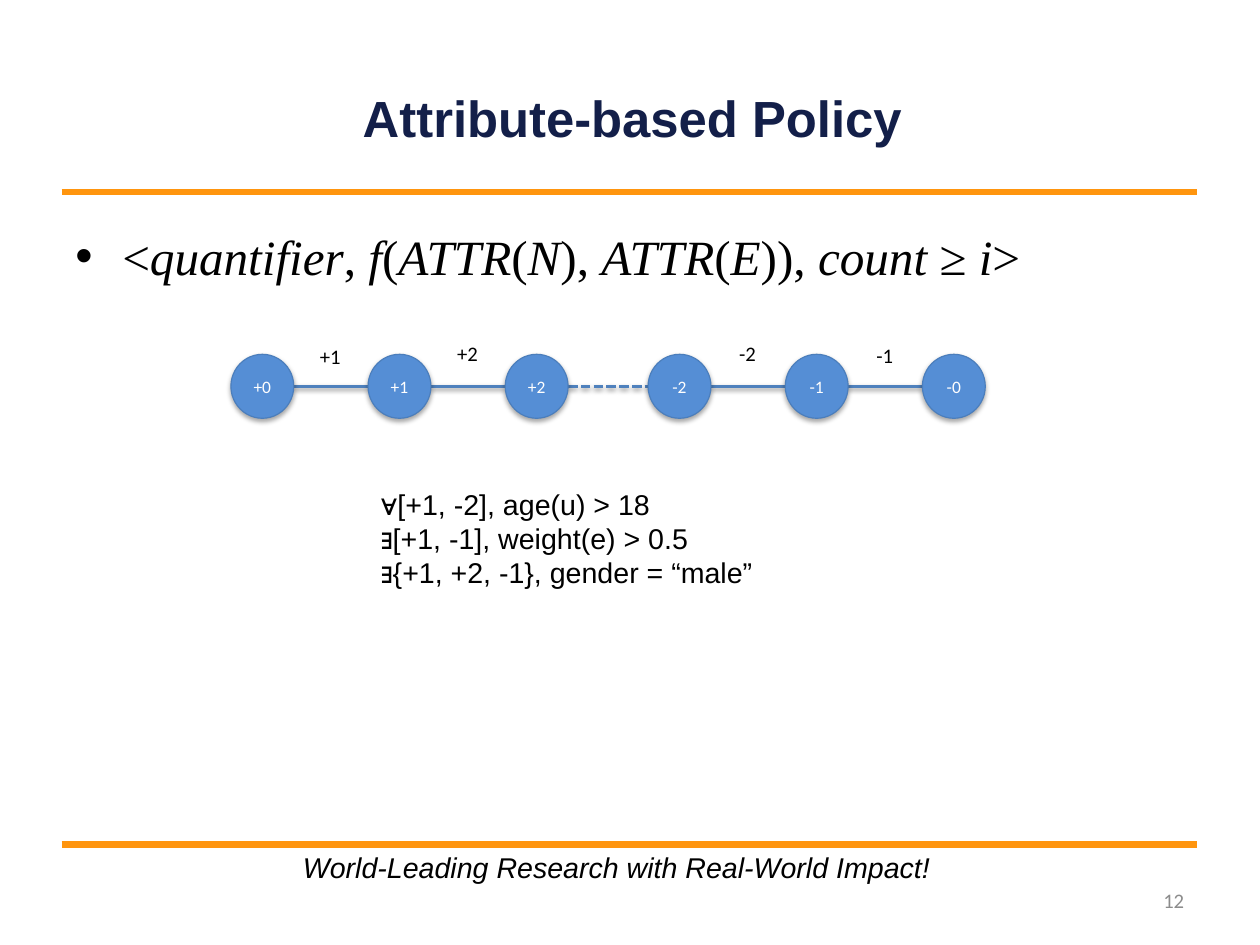
from lxml import etree
from pptx import Presentation, util as u
from pptx.dml.color import RGBColor
from pptx.enum import dml, shapes, text
from pptx.oxml.ns import qn

HUES = {"navy": "131F49", "black": "000000", "white": "FFFFFF", "grey": "8C8C8C",
        "orange": "FF950E", "node": "558ED5", "rim": "4B7EBC", "edge": "4F81BD"}
LEFT, MID = text.PP_ALIGN.LEFT, text.PP_ALIGN.CENTER
TOP, HALF = text.MSO_ANCHOR.TOP, text.MSO_ANCHOR.MIDDLE


class Deck:
    """Holds the slide and draws each kind of element in its style."""

    def __init__(self):
        self.prs = Presentation()
        self.prs.slide_width, self.prs.slide_height = u.Cm(28), u.Cm(21)
        self.slide = self.prs.slides.add_slide(self.prs.slide_layouts[1])

    def hue(self, name):
        return RGBColor.from_string(HUES[name])

    def font(self, para, size, face, hue, bold=None, slant=None):
        font = para.font
        font.size, font.name, font.bold, font.italic = u.Pt(size), face, bold, slant
        font.color.rgb = self.hue(hue)

    def frame(self, shape, anchor=TOP, pad=(0.11, 0.05), wrap=True):
        frame = shape.text_frame
        frame.margin_left = frame.margin_right = u.Inches(pad[0])
        frame.margin_top = frame.margin_bottom = u.Inches(pad[1])
        frame.vertical_anchor, frame.word_wrap = anchor, wrap
        frame.auto_size = text.MSO_AUTO_SIZE.NONE
        return frame

    def place(self, shape, box):
        shape.left, shape.top, shape.width, shape.height = map(u.Inches, box)

    def fill(self, frame, words, align, *style, **more):
        for i, line in enumerate(words.split("\n")):
            para = frame.add_paragraph() if i else frame.paragraphs[0]
            para.text, para.alignment = line, align
            self.font(para, *style, **more)

    def title(self, words, box):
        shape = self.slide.shapes.title
        self.place(shape, box)
        self.fill(self.frame(shape, HALF, (0, 0)), words, MID, 32, "Arial", "navy", bold=True)

    def body(self, parts, box):
        shape = self.slide.placeholders[1]
        self.place(shape, box)
        para = self.frame(shape).paragraphs[0]
        props = para._p.get_or_add_pPr()
        props.set("marL", str(u.Inches(0.41)))
        props.set("indent", str(-u.Inches(0.41)))
        etree.SubElement(props, qn("a:buChar"), char="•")
        para.space_before = u.Pt(0)
        self.font(para, 31, "Times New Roman", "black")
        for i, part in enumerate(parts):
            run = para.add_run()
            run.text, run.font.italic = part, i % 2 == 1

    def label(self, words, box, align, *style, anchor=TOP, wrap=True, **more):
        shape = self.slide.shapes.add_textbox(*map(u.Inches, box))
        self.fill(self.frame(shape, anchor, wrap=wrap), words, align, *style, **more)

    def shade(self, shape, alpha=None, dist=0):
        fx = etree.SubElement(shape._element.spPr, qn("a:effectLst"))
        if alpha:
            glow = etree.SubElement(fx, qn("a:outerShdw"), blurRad=str(u.Pt(3.1)),
                                    dist=str(u.Pt(dist)), dir="5400000", rotWithShape="0")
            tint = etree.SubElement(glow, qn("a:srgbClr"), val=HUES["black"])
            etree.SubElement(tint, qn("a:alpha"), val=str(alpha * 1000))

    def line(self, x, y, end, hue, width, dash=None, **shade):
        line = self.slide.shapes.add_connector(
            shapes.MSO_CONNECTOR.STRAIGHT, *map(u.Inches, (x, y, end, y)))
        line.line.color.rgb, line.line.width = self.hue(hue), u.Pt(width)
        if dash:
            line.line.dash_style = dash
        self.shade(line, **shade)

    def node(self, words, box):
        shape = self.slide.shapes.add_shape(shapes.MSO_SHAPE.OVAL, *map(u.Inches, box))
        shape.fill.solid()
        shape.fill.fore_color.rgb = self.hue("node")
        shape.line.color.rgb, shape.line.width = self.hue("rim"), u.Pt(0.75)
        self.shade(shape, alpha=35, dist=1.8)
        self.fill(self.frame(shape, HALF), words, MID, 11, "Calibri", "white")


def main():
    deck = Deck()
    for y in (1.68, 7.39):
        deck.line(0.54, y, 10.47, "orange", 4.31)
    deck.title("Attribute-based Policy", (2.32, 0.65, 6.43, 0.75))
    deck.body(["<", "quantifier", ", ", "f", "(", "ATTR", "(", "N", "), ", "ATTR", "(", "E",
               ")), ", "count", " ≥ ", "i", ">"], (0.55, 1.93, 9.92, 5.46))

    step, size = 1.2, 0.55
    names = ["+0", "+1", "+2", "-2", "-1", "-0"]
    spots = [start + step * i for start in (2.02, 5.67) for i in range(3)]
    for i, (a, b) in enumerate(zip(spots, spots[1:])):
        dash = dml.MSO_LINE.SQUARE_DOT if i == 2 else None
        deck.line(a + size, 3.38, b, "edge", 2, dash, alpha=38, dist=1.6)
    for name, x in zip(names, spots):
        deck.node(name, (x, 3.1, size, 0.56))
    for name, i, y in (("+1", 0, 2.96), ("+2", 1, 2.93), ("-2", 3, 2.93), ("-1", 4, 2.95)):
        deck.label(name, (spots[i] + size, y, 0.64, 0.33), MID, 13, "Calibri", "black")

    deck.label("∀[+1, -2], age(u) > 18\n∃[+1, -1], weight(e) > 0.5\n"
               "∃{+1, +2, -1}, gender = “male”",
               (3.22, 4.21, 4.07, 1.02), LEFT, 18, "Arial", "black")
    deck.label("World-Leading Research with Real-World Impact!", (2.54, 7.39, 5.76, 0.41),
               LEFT, 18, "Arial", "black", wrap=False, slant=True)
    deck.label("12", (7.9, 7.66, 2.57, 0.44), text.PP_ALIGN.RIGHT, 13, "Calibri", "grey",
               anchor=HALF)
    deck.prs.save("out.pptx")


if __name__ == "__main__":
    main()
